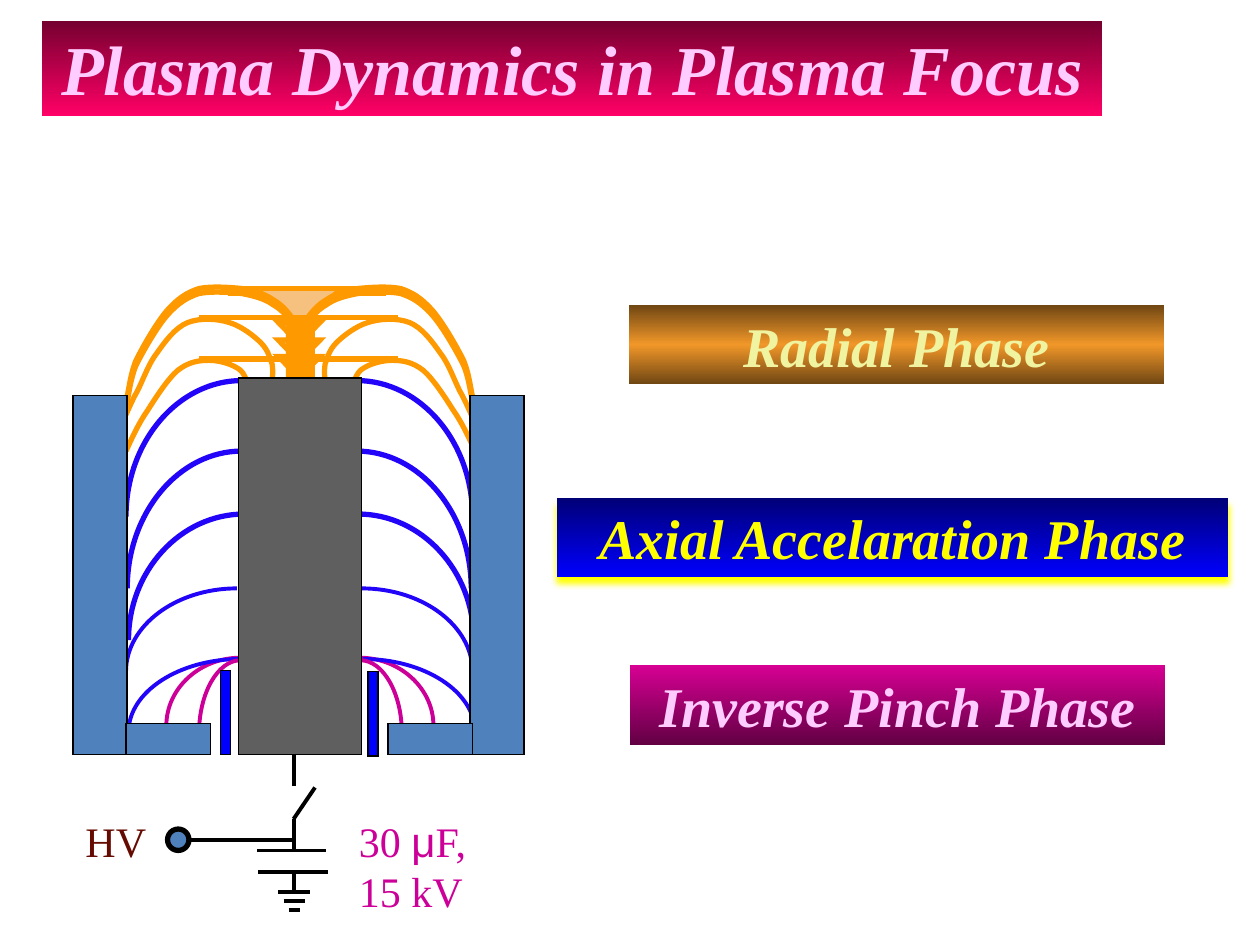
from dataclasses import dataclass

from lxml.etree import SubElement
from pptx import Presentation
from pptx.dml.color import RGBColor
from pptx.enum.shapes import MSO_CONNECTOR, MSO_SHAPE as Preset
from pptx.enum.text import MSO_ANCHOR, MSO_AUTO_SIZE, PP_ALIGN
from pptx.oxml.ns import qn
from pptx.util import Inches, Pt

COLORS = {
    "orange": "FF9900", "pale": "F6C07E", "blue": "2205F9", "magenta": "CC0099",
    "grey": "5F5F5F", "steel": "4F81BD", "insulator": "0000FF", "black": "000000",
    "maroon": "650B01", "pink": "FFCCFF", "yellow": "FFFF00", "cream": "F0F4A0",
    "wine": "760030", "rose": "FF0066", "brown": "6F4613", "amber": "F19729",
    "navy": "000076", "fuchsia": "D60093", "plum": "630044",
}
SERIF = "Times New Roman"
Point = tuple[float, float]


@dataclass
class Sheath:
    """Current sheath: Bezier points of the right half; mirror is left x + right x."""
    points: list[Point]
    color: str
    width: float
    mirror: float = 4.76


@dataclass
class Block:
    left: float
    top: float
    width: float
    height: float
    fill: str
    line: str | None = "black"
    weight: float = 0.75
    preset: Preset = Preset.RECTANGLE
    flipped: bool = False


@dataclass
class Banner:
    text: str
    left: float
    top: float
    width: float
    stops: list[str]
    color: str
    glow: str | None = None


def rgb(name: str) -> RGBColor:
    return RGBColor.from_string(COLORS[name])


def quarter(inner: float, top: float, outer: float, bottom: float) -> list[Point]:
    """A quarter ellipse, level at the inner end and upright at the outer one."""
    k = 0.55
    return [(inner, top), (inner + k * (outer - inner), top),
            (outer, bottom - k * (bottom - top)), (outer, bottom)]


def draw_curve(page, points: list[Point], color: str, width: float) -> None:
    """An open outline whose points after the first form Bezier triples."""
    start, *rest = [(Inches(x), Inches(y)) for x, y in points]
    builder = page.shapes.build_freeform(*start)
    builder.add_line_segments(rest, close=False)
    curve = builder.convert_to_shape()
    outline = next(curve._element.iter(qn("a:path")))
    outline.set("fill", "none")
    segments = outline.findall(qn("a:lnTo"))
    for i in range(0, len(segments), 3):
        bend = SubElement(outline, qn("a:cubicBezTo"))
        for segment in segments[i:i + 3]:
            bend.append(segment[0])
            outline.remove(segment)
    curve.shadow.inherit = False
    curve.fill.background()
    curve.line.color.rgb = rgb(color)
    curve.line.width = Pt(width)


def draw_sheath(page, sheath: Sheath) -> None:
    mirrored = [(sheath.mirror - x, y) for x, y in sheath.points]
    for side in (sheath.points, mirrored):
        draw_curve(page, side, sheath.color, sheath.width)


def draw_block(page, block: Block) -> None:
    box = page.shapes.add_shape(block.preset, Inches(block.left), Inches(block.top),
                                Inches(block.width), Inches(block.height))
    box.shadow.inherit = False
    if block.flipped:
        box._element.spPr.find(qn("a:xfrm")).set("flipV", "1")
    box.fill.solid()
    box.fill.fore_color.rgb = rgb(block.fill)
    if block.line:
        box.line.color.rgb = rgb(block.line)
        box.line.width = Pt(block.weight)
        SubElement(box._element.spPr.find(qn("a:ln")), qn("a:miter"), lim="800000")
    else:
        box.line.fill.background()


def draw_line(page, start: Point, end: Point, color: str = "black", width: float = 2.25) -> None:
    wire = page.shapes.add_connector(MSO_CONNECTOR.STRAIGHT, *map(Inches, start + end))
    wire.line.color.rgb = rgb(color)
    wire.line.width = Pt(width)
    SubElement(wire._element.spPr, qn("a:effectLst"))


def fill_gradient(box, stops: list[str]) -> None:
    """Top-to-bottom gradient through evenly spaced stops."""
    box.fill.gradient()
    box.fill.gradient_angle = 270
    stop_list = box._element.spPr.find(qn("a:gradFill")).find(qn("a:gsLst"))
    for old in list(stop_list):
        stop_list.remove(old)
    for i, name in enumerate(stops):
        stop = SubElement(stop_list, qn("a:gs"), pos=str(100000 * i // (len(stops) - 1)))
        SubElement(stop, qn("a:srgbClr"), val=COLORS[name])


def format_banner(box, banner: Banner, size: int) -> None:
    fill_gradient(box, banner.stops)
    frame = box.text_frame
    frame.text = banner.text
    frame.word_wrap = True
    frame.auto_size = MSO_AUTO_SIZE.NONE
    para = frame.paragraphs[0]
    para.alignment = PP_ALIGN.CENTER
    font = para.font
    font.name, font.size, font.bold, font.italic = SERIF, Pt(size), True, True
    font.color.rgb = rgb(banner.color)


def draw_banner(page, banner: Banner) -> None:
    box = page.shapes.add_shape(Preset.RECTANGLE, Inches(banner.left), Inches(banner.top),
                                Inches(banner.width), Inches(0.63))
    box.line.fill.background()
    box.shadow.inherit = False
    format_banner(box, banner, 32)
    box.text_frame.vertical_anchor = MSO_ANCHOR.TOP
    if banner.glow:
        effects = box._element.spPr.find(qn("a:effectLst"))
        shadow = SubElement(effects, qn("a:outerShdw"), blurRad=str(Pt(4)),
                            dist=str(Pt(4)), dir="5400000", algn="ctr", rotWithShape="0")
        SubElement(shadow, qn("a:srgbClr"), val=COLORS[banner.glow])


def draw_label(page, left: float, width: float, height: float, color: str,
               spans: list[tuple[str, str]]) -> None:
    box = page.shapes.add_textbox(Inches(left), Inches(6.42), Inches(width), Inches(height))
    box.text_frame.word_wrap = True
    para = box.text_frame.paragraphs[0]
    para.font.size = Pt(24)
    para.font.color.rgb = rgb(color)
    for text, face in spans:
        span = para.add_run()
        span.text, span.font.name = text, face


def down_triangle(left: float, top: float, width: float, height: float,
                  line: str, weight: float) -> Block:
    return Block(left, top, width, height, "pale", line, weight, Preset.ISOSCELES_TRIANGLE, True)


def draw_front(page, rise: float) -> None:
    """The pinched top sheath with its pale funnel."""
    draw_block(page, down_triangle(2.08, 2.34 - rise, 0.58, 0.25, "pale", 0.75))
    draw_sheath(page, Sheath([(x, y - rise) for x, y in PINCH], "orange", 3))
    draw_line(page, (1.81, 2.33 - rise), (3.06, 2.33 - rise), "orange", 3)


# Radial phase curves
PINCH = [(2.43, 2.58), (2.47, 2.52), (2.52, 2.46), (2.59, 2.42), (2.66, 2.37), (2.74, 2.35),
         (2.84, 2.33), (2.94, 2.32), (3.08, 2.31), (3.18, 2.33), (3.27, 2.36), (3.34, 2.4),
         (3.43, 2.5), (3.51, 2.59), (3.62, 2.78), (3.68, 2.9), (3.73, 3.02), (3.74, 3.17),
         (3.76, 3.22)]
COLLAPSE = [(2.58, 3.06), (2.58, 3), (2.57, 2.95), (2.58, 2.89), (2.6, 2.84), (2.61, 2.78),
            (2.67, 2.72), (2.72, 2.67), (2.82, 2.59), (2.92, 2.56), (3.01, 2.53), (3.15, 2.52),
            (3.25, 2.56), (3.35, 2.6), (3.43, 2.71), (3.5, 2.81), (3.57, 2.9), (3.62, 3.06),
            (3.67, 3.14), (3.71, 3.22), (3.73, 3.27), (3.75, 3.31)]
ONSET = [(2.78, 3.18), (2.79, 3.09), (2.81, 2.99), (2.86, 2.94), (2.92, 2.89), (3.03, 2.86),
         (3.11, 2.86), (3.19, 2.86), (3.27, 2.87), (3.36, 2.94), (3.44, 3.01), (3.53, 3.15),
         (3.6, 3.26), (3.67, 3.36), (3.72, 3.47), (3.77, 3.58)]

# Axial and inverse pinch arcs
ARCS = [
    Sheath(quarter(2.83, 3.58, 3.74, 4.67), "blue", 3, 4.75),
    Sheath(quarter(2.87, 4.67, 3.75, 5.33), "blue", 2.25, 4.75),
    Sheath(quarter(2.85, 5.22, 3.44, 5.76), "magenta", 2.25),
    Sheath(quarter(2.83, 3.02, 3.75, 4.1), "blue", 3, 4.75),
    Sheath(quarter(2.84, 4.08, 3.76, 5.08), "blue", 3, 4.78),
    Sheath(quarter(2.88, 5.23, 3.77, 5.81), "blue", 2.25, 4.79),
    Sheath(quarter(2.86, 5.24, 3.19, 5.82), "magenta", 2.25, 4.77),
]
DEVICE = [
    Block(1.89, 3, 0.98, 2.99, "grey"),
    *[Block(x, 3.14, 0.43, 2.85, "steel") for x in (0.58, 3.73)],
    *[Block(x, 5.74, 0.67, 0.25, "steel") for x in (1, 3.08)],
    *[Block(x, y, 0.08, 0.67, "insulator") for x, y in ((1.75, 5.32), (2.92, 5.33))],
]
# Switch, capacitor, ground and supply wire
CIRCUIT = [
    ((2.33, 5.99), (2.33, 6.24)), ((2.33, 6.5), (2.33, 6.75)), ((2.04, 6.75), (2.59, 6.75)),
    ((2.05, 6.92), (2.6, 6.92)), ((2.33, 6.92), (2.33, 7.08)), ((2.21, 7.08), (2.46, 7.08)),
    ((2.25, 7.15), (2.42, 7.15)), ((2.33, 6.5), (2.5, 6.25)), ((2.29, 7.22), (2.38, 7.22)),
    ((2.33, 6.67), (1.5, 6.67)),
]
TITLE = Banner("Plasma Dynamics in Plasma Focus", 0.33, 0.17, 8.42, ["wine", "rose"], "pink")
PHASES = [
    Banner("Inverse Pinch Phase", 5, 5.28, 4.25, ["fuchsia", "plum"], "pink"),
    Banner("Axial Accelaration Phase", 4.42, 3.95, 5.33, ["navy", "insulator"], "yellow", "yellow"),
    Banner("Radial Phase", 4.99, 2.42, 4.25, ["brown", "amber", "brown"], "cream"),
]


def main() -> None:
    deck = Presentation()
    deck.slide_width, deck.slide_height = Inches(10), Inches(7.5)
    page = deck.slides.add_slide(deck.slide_layouts[5])
    title = page.shapes.title
    title.left, title.top = Inches(TITLE.left), Inches(TITLE.top)
    title.width, title.height = Inches(TITLE.width), Inches(0.75)
    format_banner(title, TITLE, 40)
    title.text_frame.vertical_anchor = MSO_ANCHOR.BOTTOM

    # Plasma column and radial sheaths
    draw_front(page, 0)
    for top in (2.56, 2.7, 2.83):
        draw_block(page, down_triangle(2.21, top, 0.33, 0.17, "orange", 3))
    draw_line(page, (2.38, 2.5), (2.38, 2.59), "pale", 6)
    draw_front(page, 0.04)
    draw_block(page, Block(2.27, 2.52, 0.23, 0.51, "orange", None))
    for points, mirror, y in ((COLLAPSE, 4.74, 2.52), (ONSET, 4.77, 2.85)):
        draw_sheath(page, Sheath(points, "orange", 3, mirror))
        draw_line(page, (1.58, y), (3.16, y), "orange", 3)

    # Axial sheaths, electrodes and circuit
    for arc in ARCS:
        draw_sheath(page, arc)
    for block in DEVICE:
        draw_block(page, block)
    for start, end in CIRCUIT:
        draw_line(page, start, end)
    draw_block(page, Block(1.33, 6.58, 0.17, 0.17, "steel", "black", 3, Preset.OVAL))
    draw_label(page, 0.58, 0.75, 0.5, "maroon", [("HV", SERIF)])
    draw_label(page, 2.75, 1.42, 0.9, "magenta",
               [("30 ", SERIF), ("μ", "Arial"), ("F, 15 kV", SERIF)])
    for phase in PHASES:
        draw_banner(page, phase)
    deck.save("out.pptx")


if __name__ == "__main__":
    main()
